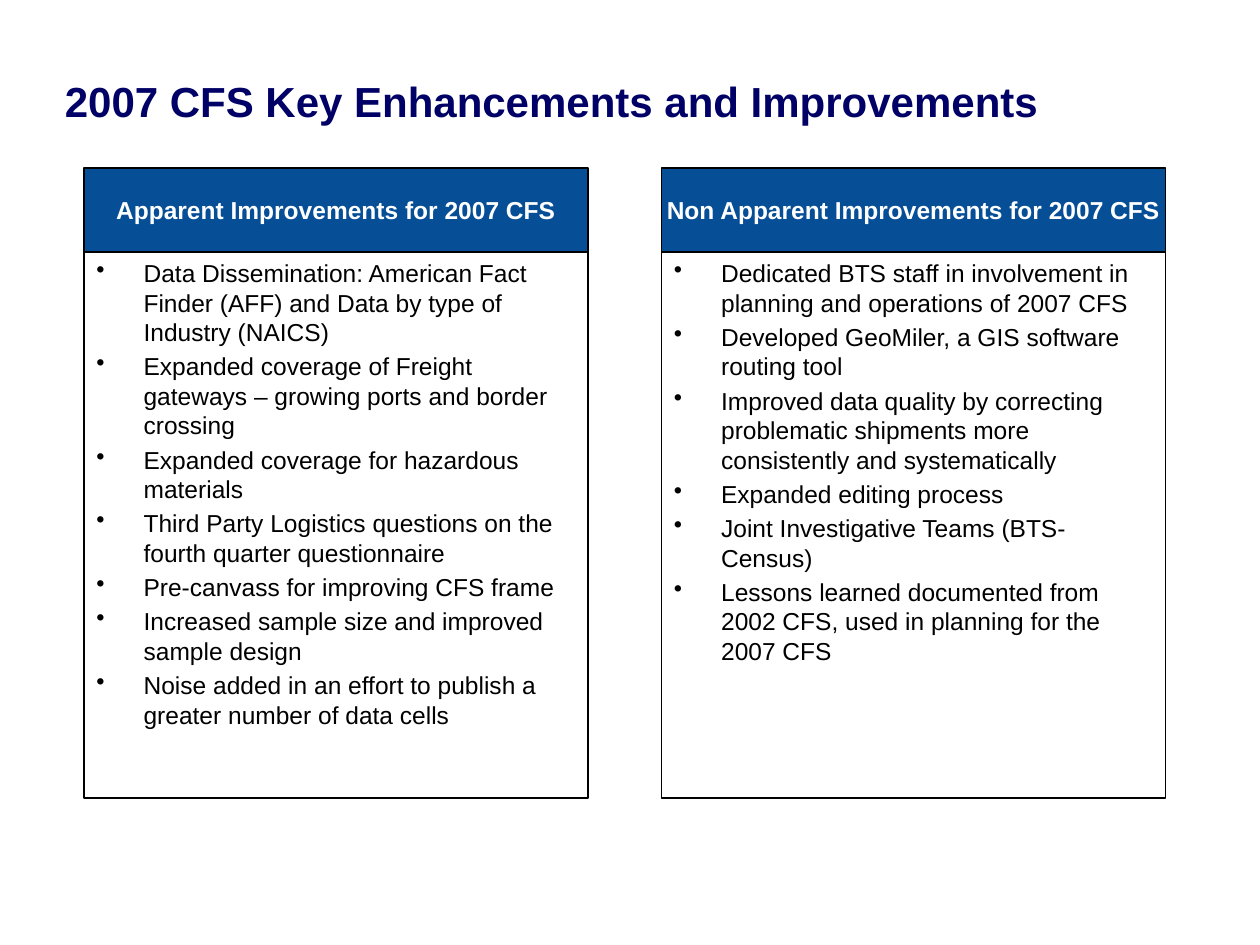
import pptx
import pptx.dml.color
import pptx.enum.shapes
import pptx.enum.text
import pptx.util
from lxml import etree
from pptx.oxml.ns import qn

PX = 9525  # EMU per px, 96 px to the inch
COLORS = {"navy": "000066", "blue": "064E96", "white": "FFFFFF", "black": "000000"}
ALIGN = pptx.enum.text.PP_ALIGN
ANCHOR = pptx.enum.text.MSO_ANCHOR


class SlideBuilder:
    font_name = "Arial"
    body_size = 14
    title_size = 24
    indent = 36

    def __init__(self, page):
        self.page = page

    def color(self, name):
        return pptx.dml.color.RGBColor.from_string(COLORS[name])

    def style(self, para, size, color, bold=False, align=ALIGN.LEFT):
        para.alignment = align
        para.font.name = self.font_name
        para.font.size = pptx.util.Pt(size)
        para.font.bold = bold
        para.font.color.rgb = self.color(color)

    def title(self, text, *place):
        box = self.page.shapes.add_textbox(*(n * PX for n in place))
        frame = box.text_frame
        frame.word_wrap = True
        frame.vertical_anchor = ANCHOR.MIDDLE
        frame.text = text
        self.style(frame.paragraphs[0], self.title_size, "navy", bold=True)

    def rectangle(self, place, fill=None):
        box = self.page.shapes.add_shape(
            pptx.enum.shapes.MSO_SHAPE.RECTANGLE, *(n * PX for n in place))
        box.shadow.inherit = False
        if fill:
            box.fill.solid()
            box.fill.fore_color.rgb = self.color(fill)
        else:
            box.fill.background()
        box.line.color.rgb = self.color("black")
        box.line.width = pptx.util.Pt(0.75)
        return box

    def header(self, text, *place):
        frame = self.rectangle(place, "blue").text_frame
        frame.word_wrap = False
        frame.vertical_anchor = ANCHOR.MIDDLE
        frame.text = text
        self.style(frame.paragraphs[0], self.body_size, "white", True, ALIGN.CENTER)

    def bullet_list(self, items, *place):
        frame = self.rectangle(place).text_frame
        frame.word_wrap = True
        frame.vertical_anchor = ANCHOR.TOP
        frame.text = "\n".join(items)
        for index, para in enumerate(frame.paragraphs):
            properties = para._p.get_or_add_pPr()
            properties.set("marL", str(self.indent * PX))
            properties.set("indent", str(-self.indent * PX))
            etree.SubElement(properties, qn("a:buChar"), char="•")
            if index:
                para.space_before = pptx.util.Pt(0.2 * self.body_size)
            self.style(para, self.body_size, "black")


COLUMNS = [
    ("Apparent Improvements for 2007 CFS", [
        "Data Dissemination: American Fact Finder (AFF) and Data by type of Industry (NAICS)",
        "Expanded coverage of Freight gateways – growing ports and border crossing",
        "Expanded coverage for hazardous materials",
        "Third Party Logistics questions on the fourth quarter questionnaire",
        "Pre-canvass for improving CFS frame",
        "Increased sample size and improved sample design",
        "Noise added in an effort to publish a greater number of data cells",
    ]),
    ("Non Apparent Improvements for 2007 CFS", [
        "Dedicated BTS staff in involvement in planning and operations of 2007 CFS",
        "Developed GeoMiler, a GIS software routing tool",
        "Improved data quality by correcting problematic shipments more "
        "consistently and systematically",
        "Expanded editing process",
        "Joint Investigative Teams (BTS-Census)",
        "Lessons learned documented from 2002 CFS, used in planning for the 2007 CFS",
    ]),
]
LEFT, TOP, WIDTH, PITCH = 64, 128, 384, 440
HEADER_HEIGHT, LIST_HEIGHT = 64, 416


def main():
    deck = pptx.Presentation()
    deck.slide_width, deck.slide_height = 960 * PX, 720 * PX
    builder = SlideBuilder(deck.slides.add_slide(deck.slide_layouts[6]))

    # Title
    builder.title("2007 CFS Key Enhancements and Improvements", 40, 35, 864, 84)

    # Two columns, each a header above a bulleted list
    for index, (heading, items) in enumerate(COLUMNS):
        left = LEFT + index * PITCH
        builder.header(heading, left, TOP, WIDTH, HEADER_HEIGHT)
        builder.bullet_list(items, left, TOP + HEADER_HEIGHT, WIDTH, LIST_HEIGHT)

    deck.save("out.pptx")


if __name__ == "__main__":
    main()
